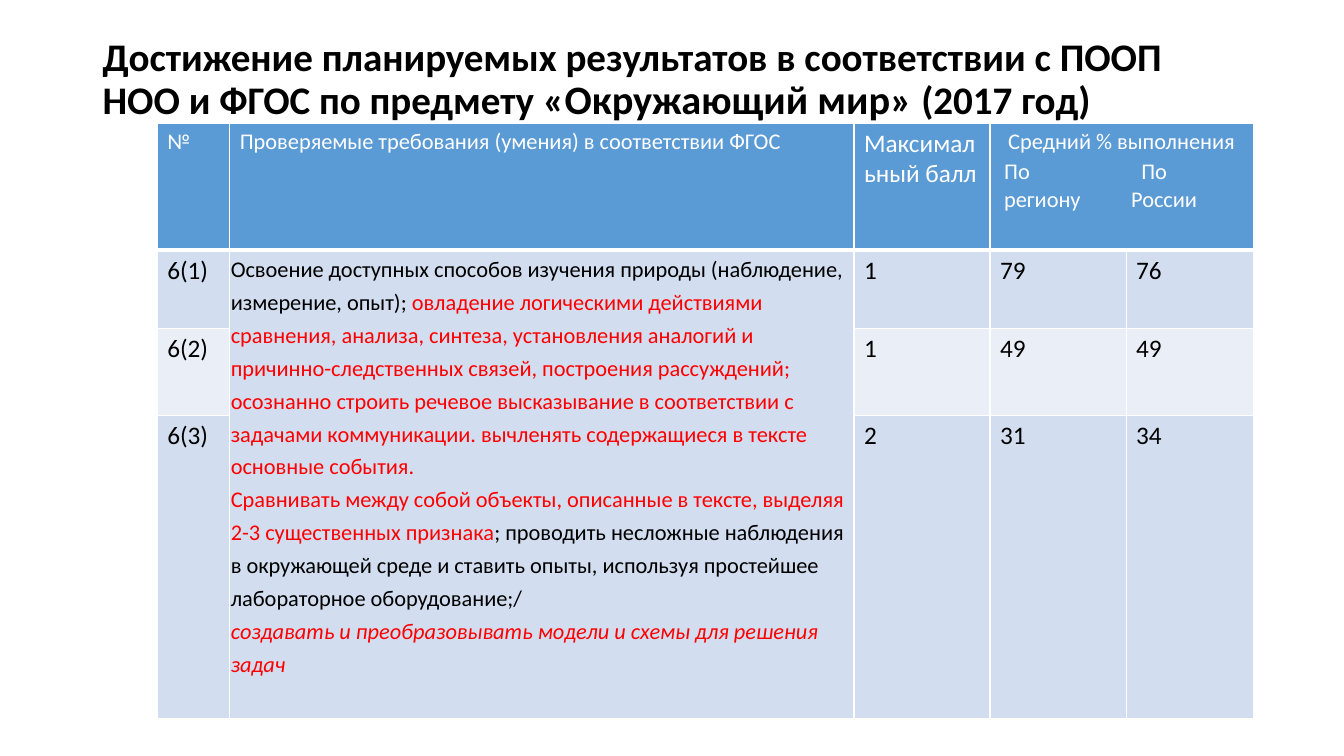
from lxml import etree
from pptx import Presentation
from pptx.dml.color import RGBColor
from pptx.enum.text import MSO_ANCHOR, PP_ALIGN
from pptx.oxml.ns import qn
from pptx.util import Inches, Pt

MIDDLE = MSO_ANCHOR.MIDDLE
CENTER = PP_ALIGN.CENTER
WHITE, BLACK, RED = "FFFFFF", "000000", "FF0000"
HEADER_BLUE, BAND_DARK, BAND_LIGHT = "5B9BD5", "D2DEEF", "EAEFF7"

COLUMN_SHARES = [5.4, 46.44, 10.13, 10.13, 9.45]
ROW_SHARES = [16.8, 10.4, 11.47, 40.13]
ROW_FILLS = [HEADER_BLUE, BAND_DARK, BAND_LIGHT, BAND_DARK]
SCORES = [
    ("6(1)", "1", "79", "76"),
    ("6(2)", "1", "49", "49"),
    ("6(3)", "2", "31", "34"),
]
SCORE_COLUMNS = (0, 2, 3, 4)

TITLE = [
    ("Достижение планируемых результатов в соответствии с ПООП НОО и ФГОС по предмету ", {}),
    ("«Окружающий мир» ", {"size": Pt(28.8)}),
    ("(2017 год)", {}),
]
SKILLS = [
    [
        ("Освоение доступных способов изучения природы (наблюдение, измерение, опыт); ", {}),
        ("овладение логическими действиями сравнения, анализа, синтеза, установления "
         "аналогий и причинно-следственных связей, построения рассуждений; осознанно "
         "строить речевое высказывание в соответствии с задачами коммуникации. "
         "вычленять содержащиеся в тексте основные события.\n"
         "Сравнивать между собой объекты, описанные в тексте, выделяя 2-3 существенных "
         "признака", {"color": RED}),
        ("; проводить несложные наблюдения в окружающей среде и ставить опыты, "
         "используя простейшее лабораторное оборудование;/", {}),
    ],
    [("создавать и преобразовывать модели и схемы для решения задач",
      {"color": RED, "italic": True})],
]


def color(value):
    """Turn a hex string into a colour."""
    return RGBColor.from_string(value)


class Page:
    """Hold the style and the current slide; lengths are percent of its size."""

    font = "Calibri"

    def __init__(self, deck):
        """Add a blank slide to the deck."""
        self.deck = deck
        self.slide = deck.slides.add_slide(deck.slide_layouts[6])

    def across(self, share):
        """Convert a share of the slide width."""
        return round(self.deck.slide_width * share / 100)

    def down(self, share):
        """Convert a share of the slide height."""
        return round(self.deck.slide_height * share / 100)

    def area(self, left, top, width, height):
        """Convert a rectangle given in shares."""
        return self.across(left), self.down(top), self.across(width), self.down(height)

    def fill_frame(self, frame, paragraphs, base, layout=None):
        """Fill a text frame with paragraphs of formatted spans."""
        for index, spans in enumerate(paragraphs):
            para = frame.add_paragraph() if index else frame.paragraphs[0]
            for name, value in (layout or {}).items():
                setattr(para, name, value)
            for text, changes in spans:
                for number, line in enumerate(text.split("\n")):
                    if number:
                        para.add_line_break()
                    self.span(para, line, {**base, **changes})

    def span(self, para, text, style):
        """Add one formatted span to a paragraph."""
        span = para.add_run()
        span.text = text
        span.font.name = self.font
        span.font.color.rgb = color(style["color"])
        for name, value in style.items():
            if name != "color":
                setattr(span.font, name, value)

    def text(self, area, spans, base, layout, frame_style):
        """Add a text box."""
        frame = self.slide.shapes.add_textbox(*self.area(*area)).text_frame
        for name, value in frame_style.items():
            setattr(frame, name, value)
        self.fill_frame(frame, [spans], base, layout)

    def table(self, left, top, columns, rows, fills):
        """Add a table with plain fills and white rules."""
        area = self.area(left, top, sum(columns), sum(rows))
        table = self.slide.shapes.add_table(len(rows), len(columns), *area).table
        table.first_row = table.horz_banding = False
        for column, share in zip(table.columns, columns):
            column.width = self.across(share)
        for index, (row, share, fill) in enumerate(zip(table.rows, rows, fills)):
            row.height = self.down(share)
            for cell in row.cells:
                self.rules(cell, 1 if index else 3)
                cell.fill.solid()
                cell.fill.fore_color.rgb = color(fill)
        return table

    def rules(self, cell, bottom):
        """Draw the four white rules of a cell."""
        properties = cell._tc.get_or_add_tcPr()
        for side, points in (("L", 1), ("R", 1), ("T", 1), ("B", bottom)):
            line = etree.SubElement(properties, qn(f"a:ln{side}"), w=str(Pt(points)))
            fill = etree.SubElement(line, qn("a:solidFill"))
            etree.SubElement(fill, qn("a:srgbClr"), val=WHITE)

    def tabs(self, para, stops):
        """Set left tab stops in inches."""
        tab_list = etree.SubElement(para._p.get_or_add_pPr(), qn("a:tabLst"))
        for stop in stops:
            etree.SubElement(tab_list, qn("a:tab"), pos=str(Inches(stop)), algn="l")


def fill_header(page, table):
    """Fill the header row."""
    base = {"size": Pt(16), "color": WHITE}
    captions = [
        [[("№", {})]],
        [[("Проверяемые требования (умения) в соответствии ФГОС", {})]],
        [[("Максимальный балл", {"size": Pt(18)})]],
        [[("Средний % выполнения", {})],
         [("\t", {"size": Pt(18)}), ("По\tПо", {})],
         [("\tрегиону\tРоссии", {})]],
    ]
    table.cell(0, 3).merge(table.cell(0, 4))
    for column, caption in enumerate(captions):
        page.fill_frame(table.cell(0, column).text_frame, caption, base)
    heading, first, second = table.cell(0, 3).text_frame.paragraphs
    heading.alignment = CENTER
    page.tabs(first, (0.04, 1.4))
    page.tabs(second, (0.04, 1.3))


def fill_body(page, table):
    """Fill in the skills and the scores."""
    skills = table.cell(1, 1)
    skills.merge(table.cell(3, 1))
    for side in ("left", "top", "right", "bottom"):
        setattr(skills, f"margin_{side}", Inches(0.01))
    page.fill_frame(skills.text_frame, SKILLS, {"size": Pt(16), "color": BLACK},
                    {"line_spacing": 1.2})
    for row, scores in enumerate(SCORES, 1):
        for column, score in zip(SCORE_COLUMNS, scores):
            page.fill_frame(table.cell(row, column).text_frame, [[(score, {})]],
                            {"size": Pt(18), "color": BLACK})


def main():
    """Build the deck."""
    deck = Presentation()
    deck.slide_width, deck.slide_height = Inches(13.33), Inches(7.5)
    page = Page(deck)
    page.text((6.9, 5.33, 86.27, 19.33), TITLE,
              {"size": Pt(27.9), "color": BLACK, "bold": True},
              {"line_spacing": 0.9},
              {"word_wrap": True, "vertical_anchor": MIDDLE,
               "margin_top": 0, "margin_bottom": Inches(0.65)})
    table = page.table(11.7, 16.27, COLUMN_SHARES, ROW_SHARES, ROW_FILLS)
    fill_header(page, table)
    fill_body(page, table)
    deck.save("out.pptx")


if __name__ == "__main__":
    main()
